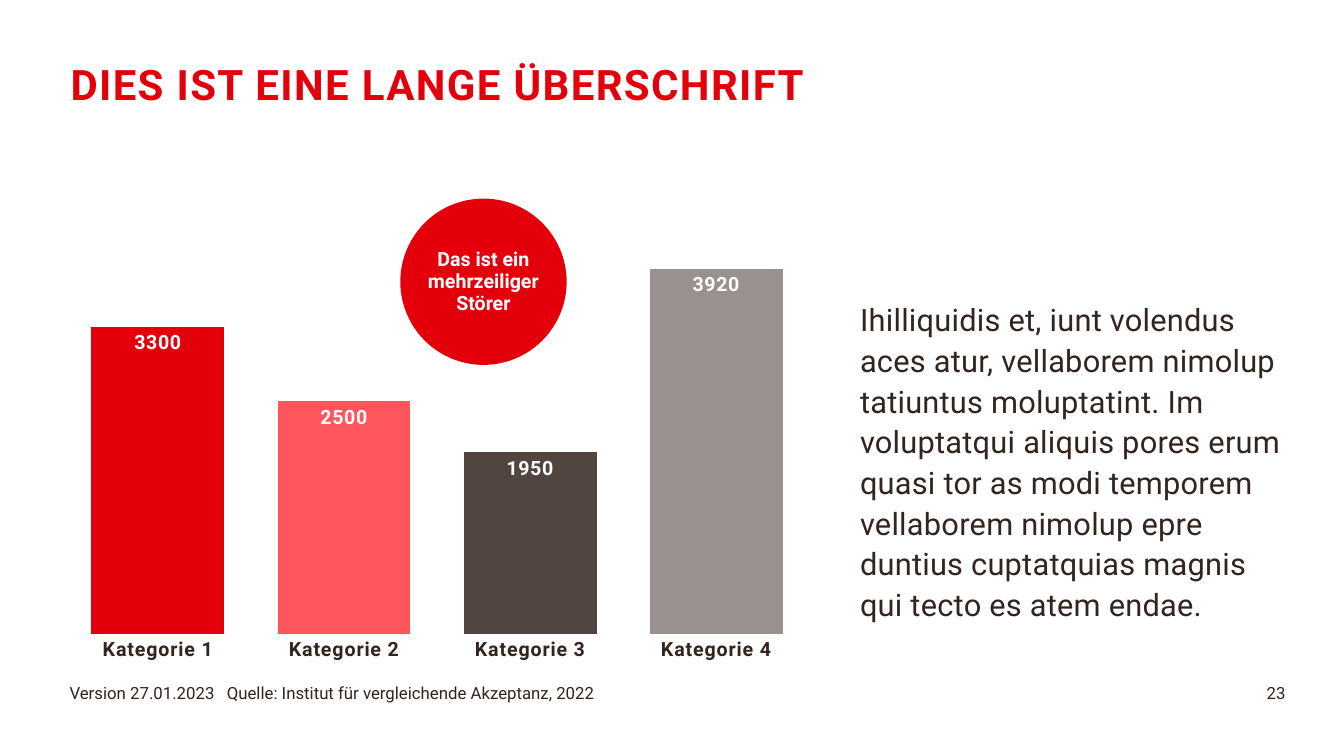
import pptx
import pptx.chart.data
import pptx.dml.color
import pptx.enum.chart
import pptx.enum.shapes
import pptx.enum.text
import pptx.oxml
import pptx.util
from pptx.util import Inches

FONT = "Roboto"
COLORS = {
    "red": "E3000B",
    "coral": "FF555D",
    "brown": "524540",
    "grey": "99918F",
    "text": "32241E",
    "white": "FFFFFF",
}
CATEGORIES = [
    ("Kategorie 1", 3300, "red"),
    ("Kategorie 2", 2500, "coral"),
    ("Kategorie 3", 1950, "brown"),
    ("Kategorie 4", 3920, "grey"),
]
NAMESPACES = (
    'xmlns:c="http://schemas.openxmlformats.org/drawingml/2006/chart" '
    'xmlns:a="http://schemas.openxmlformats.org/drawingml/2006/main"'
)


def rgb(color):
    """Return the named colour as an RGB value."""
    return pptx.dml.color.RGBColor.from_string(COLORS[color])


def style_font(font, size, color="text", bold=False, spacing=0):
    """Set typeface, size, colour, weight and letter spacing in points."""
    font.name = FONT
    font.size = pptx.util.Pt(size)
    font.bold = bold
    font.color.rgb = rgb(color)
    if spacing:
        font._element.set("spc", str(round(spacing * 100)))


def write_text(shape, lines, size, color="text", bold=False, spacing=0,
               align=pptx.enum.text.PP_ALIGN.LEFT, line_spacing=1.0,
               anchor=pptx.enum.text.MSO_ANCHOR.TOP):
    """Write one paragraph, with line breaks between lines, and return it."""
    frame = shape.text_frame
    frame.word_wrap = True
    frame.vertical_anchor = anchor
    frame.margin_left = frame.margin_right = 0
    frame.margin_top = frame.margin_bottom = 0
    para = frame.paragraphs[0]
    para.alignment = align
    para.line_spacing = line_spacing
    for index, line in enumerate(lines):
        if index:
            para.add_line_break()
        span = para.add_run()
        span.text = line
        style_font(span.font, size, color, bold, spacing)
    return para


def add_title(page, left, top, width, height):
    """Place the headline."""
    box = page.shapes.add_textbox(left, top, width, height)
    write_text(box, ["DIES IST EINE LANGE ÜBERSCHRIFT"], 30, "red",
               bold=True, spacing=1, line_spacing=0.85)


def add_column_chart(page, left, top, width, height):
    """Place the column chart with one colour per category."""
    data = pptx.chart.data.CategoryChartData()
    data.categories = [name for name, value, color in CATEGORIES]
    data.add_series("Series 1", [value for name, value, color in CATEGORIES])
    kind = pptx.enum.chart.XL_CHART_TYPE.COLUMN_CLUSTERED
    chart = page.shapes.add_chart(kind, left, top, width, height, data).chart
    chart.has_legend = False
    chart.has_title = False
    style_font(chart.font, 10)

    value_axis = chart.value_axis
    value_axis.minimum_scale = 0
    value_axis.maximum_scale = 4500
    value_axis.has_major_gridlines = False
    value_axis.visible = False
    category_axis = chart.category_axis
    category_axis.major_tick_mark = pptx.enum.chart.XL_TICK_MARK.NONE
    category_axis.format.line.fill.background()
    style_font(category_axis.tick_labels.font, 14, bold=True, spacing=0.5)

    plot = chart.plots[0]
    plot.gap_width = 40
    plot.overlap = 100
    plot.vary_by_categories = False
    series = plot.series[0]
    series.format.fill.solid()
    series.format.fill.fore_color.rgb = rgb("text")
    for index, (name, value, color) in enumerate(CATEGORIES):
        fill = series.points[index].format.fill
        fill.solid()
        fill.fore_color.rgb = rgb(color)
    labels = series.data_labels
    labels.show_value = True
    labels.position = pptx.enum.chart.XL_LABEL_POSITION.INSIDE_END
    style_font(labels.font, 14, "white", bold=True, spacing=0.3)
    fix_plot_area(chart, 0.02, 0.02, 0.96, 0.9)


def fix_plot_area(chart, x, y, w, h):
    """Pin the inner plot area to fractions of the chart box."""
    plot_area = chart._chartSpace.chart.plotArea
    for layout in plot_area.xpath("c:layout"):
        plot_area.remove(layout)
    sizes = "".join(f'<c:{key} val="{value}"/>' for key, value in
                    (("x", x), ("y", y), ("w", w), ("h", h)))
    plot_area.insert(0, pptx.oxml.parse_xml(
        f'<c:layout {NAMESPACES}><c:manualLayout>'
        '<c:layoutTarget val="inner"/><c:xMode val="edge"/>'
        f'<c:yMode val="edge"/>{sizes}</c:manualLayout></c:layout>'))


def add_body(page, left, top, width, height):
    """Place the running text beside the chart."""
    box = page.shapes.add_textbox(left, top, width, height)
    write_text(box, [
        "Ihilliquidis et, iunt volendus aces atur, vellaborem nimolup "
        "tatiuntus moluptatint. Im voluptatqui aliquis pores erum quasi tor "
        "as modi temporem vellaborem nimolup epre duntius cuptatquias magnis ",
        "qui tecto es atem endae.",
    ], 22, spacing=0.2, line_spacing=1.1)


def add_badge(page, left, top, diameter):
    """Place the round callout."""
    badge = page.shapes.add_shape(pptx.enum.shapes.MSO_SHAPE.OVAL,
                                  left, top, diameter, diameter)
    badge.shadow.inherit = False
    badge.fill.solid()
    badge.fill.fore_color.rgb = rgb("red")
    badge.line.fill.background()
    write_text(badge, ["Das ist ein mehrzeiliger Störer"], 14, "white",
               bold=True, align=pptx.enum.text.PP_ALIGN.CENTER,
               line_spacing=0.95, anchor=pptx.enum.text.MSO_ANCHOR.MIDDLE)


def add_footer(page, left, top, width, height):
    """Place version and source on the left, page number on the right."""
    number_width = Inches(2.15)
    source = page.shapes.add_textbox(left, top, Inches(8.23), height)
    para = write_text(source, [
        "Version 27.01.2023\tQuelle: Institut für vergleichende Akzeptanz, 2022"
    ], 12)
    para._p.get_or_add_pPr().append(pptx.oxml.parse_xml(
        f'<a:tabLst {NAMESPACES}><a:tab pos="{Inches(1.56)}" algn="l"/>'
        '</a:tabLst>'))
    number = page.shapes.add_textbox(left + width - number_width, top,
                                     number_width, height)
    write_text(number, ["23"], 12, align=pptx.enum.text.PP_ALIGN.RIGHT)


def main():
    """Build the slide and save the deck."""
    deck = pptx.Presentation()
    deck.slide_width = Inches(13.33)
    deck.slide_height = Inches(7.5)
    page = deck.slides.add_slide(deck.slide_layouts[6])
    add_column_chart(page, Inches(0.49), Inches(2.04), Inches(7.69), Inches(4.62))
    add_footer(page, Inches(0.69), Inches(6.77), Inches(12.06), Inches(0.4))
    add_title(page, Inches(0.7), Inches(0.66), Inches(8.2), Inches(1.12))
    add_body(page, Inches(8.53), Inches(2.95), Inches(4.21), Inches(3.49))
    add_badge(page, Inches(3.97), Inches(1.97), Inches(1.65))
    deck.save("out.pptx")


if __name__ == "__main__":
    main()
